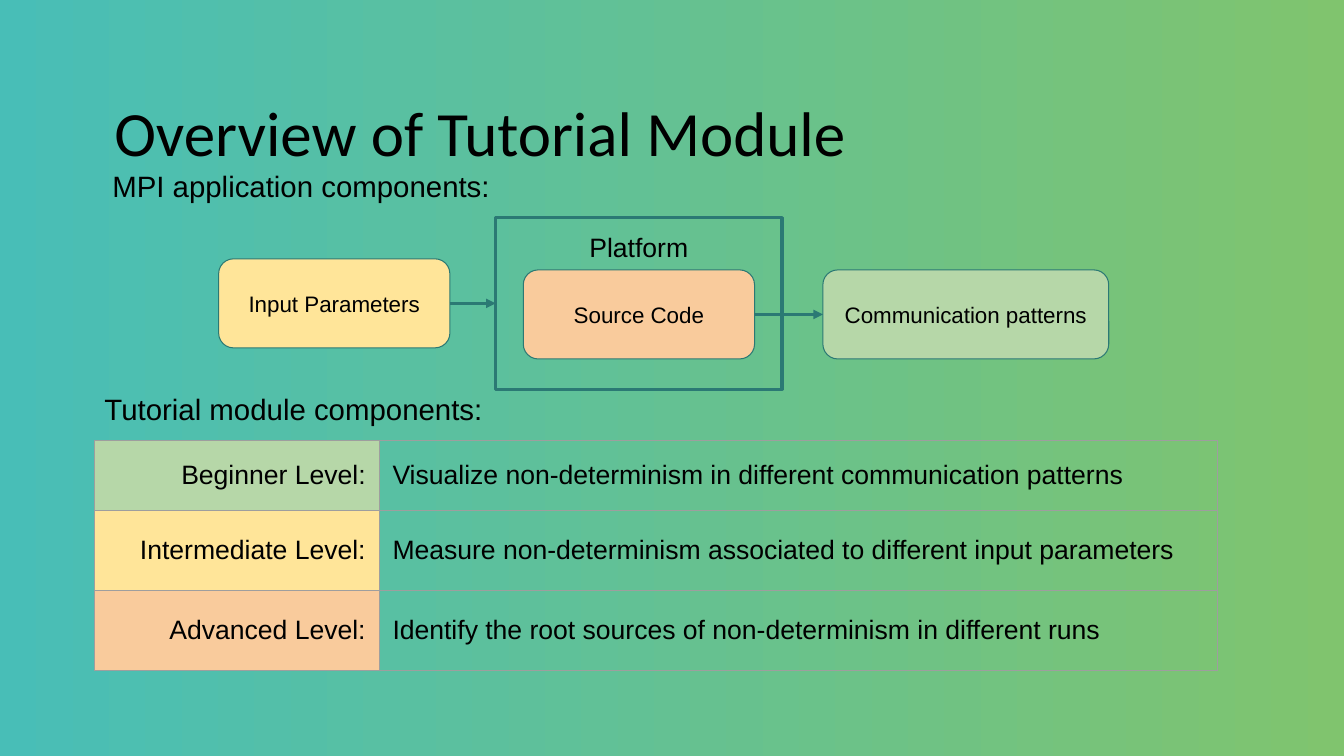
from pptx import Presentation
from pptx.dml.color import RGBColor
from pptx.enum.shapes import MSO_CONNECTOR, MSO_SHAPE
from pptx.enum.text import MSO_ANCHOR, MSO_AUTO_SIZE, PP_ALIGN
from pptx.oxml.ns import qn
from pptx.util import Pt
from lxml.etree import SubElement

BLACK = RGBColor(0x00, 0x00, 0x00)
TEAL = RGBColor(0x2B, 0x79, 0x74)
AQUA = RGBColor(0x48, 0xBE, 0xB7)
LEAF = RGBColor(0x80, 0xC4, 0x6E)
GREEN = RGBColor(0xB6, 0xD7, 0xA8)
YELLOW = RGBColor(0xFF, 0xE5, 0x99)
ORANGE = RGBColor(0xF9, 0xCB, 0x9C)
GRAY = RGBColor(0x9E, 0x9E, 0x9E)

LEVELS = [
    ("Beginner Level:", GREEN,
     "Visualize non-determinism in different communication patterns"),
    ("Intermediate Level:", YELLOW,
     "Measure non-determinism associated to different input parameters"),
    ("Advanced Level:", ORANGE,
     "Identify the root sources of non-determinism in different runs"),
]


class Page:
    """Holds the style and the current slide."""
    font = "Arial"
    pad = 9.6

    def __init__(self, deck):
        self.slide = deck.slides.add_slide(deck.slide_layouts[5])
        self.shapes = self.slide.shapes

    def back(self, *tones):
        fill = self.slide.background.fill
        fill.gradient()
        fill.gradient_angle = 0
        for stop, tone in zip(fill.gradient_stops, tones):
            stop.color.rgb = tone

    def inset(self, item, side, edge):
        item.margin_left = item.margin_right = Pt(side)
        item.margin_top = item.margin_bottom = Pt(edge)

    def words(self, frame, text, size, align=PP_ALIGN.LEFT, font=None):
        para = frame.paragraphs[0]
        para.alignment = align
        run = para.add_run()
        run.text = text
        run.font.name = font or self.font
        run.font.size = Pt(size)
        run.font.color.rgb = BLACK

    def title(self, text, *area):
        shape = self.shapes.title
        shape.left, shape.top, shape.width, shape.height = map(Pt, area)
        frame = shape.text_frame
        frame.auto_size = MSO_AUTO_SIZE.NONE
        frame.vertical_anchor = MSO_ANCHOR.MIDDLE
        self.inset(frame, self.pad, self.pad / 2)
        self.words(frame, text, 45, font="Calibri")

    def label(self, text, *area):
        frame = self.shapes.add_textbox(*map(Pt, area)).text_frame
        frame.word_wrap = True
        frame.auto_size = MSO_AUTO_SIZE.SHAPE_TO_FIT_TEXT
        self.inset(frame, self.pad, self.pad)
        self.words(frame, text, 21)

    def box(self, text, area, tone=None):
        kind = MSO_SHAPE.ROUNDED_RECTANGLE if tone else MSO_SHAPE.RECTANGLE
        shape = self.shapes.add_shape(kind, *map(Pt, area))
        shape.shadow.inherit = False
        shape.line.color.rgb = TEAL
        frame = shape.text_frame
        frame.word_wrap = True
        self.inset(frame, self.pad, self.pad)
        if tone:
            shape.fill.solid()
            shape.fill.fore_color.rgb = tone
            shape.line.width = Pt(0.75)
            frame.vertical_anchor = MSO_ANCHOR.MIDDLE
        else:
            shape.fill.background()
            shape.line.width = Pt(2.25)
            frame.vertical_anchor = MSO_ANCHOR.TOP
        self.words(frame, text, 16 if tone else 19, PP_ALIGN.CENTER)
        return shape

    def arrow(self, start, end, kind=MSO_CONNECTOR.STRAIGHT):
        link = self.shapes.add_connector(kind, 0, 0, 0, 0)
        link.begin_connect(start, 3)
        link.end_connect(end, 1)
        link.line.color.rgb = TEAL
        link.line.width = Pt(2.25)
        props = link._element.spPr
        SubElement(props.find(qn("a:ln")), qn("a:tailEnd"), type="triangle")
        SubElement(props, qn("a:effectLst"))

    def edge(self, cell):
        props = cell._tc.get_or_add_tcPr()
        for spot, side in enumerate("LRTB"):
            line = SubElement(props, qn(f"a:ln{side}"), w=str(Pt(0.75)))
            fill = SubElement(line, qn("a:solidFill"))
            SubElement(fill, qn("a:srgbClr"), val=str(GRAY))
            props.insert(spot, line)

    def cell(self, cell, text, align, tone=None):
        if tone:
            cell.fill.solid()
            cell.fill.fore_color.rgb = tone
        else:
            cell.fill.background()
        cell.vertical_anchor = MSO_ANCHOR.MIDDLE
        self.inset(cell, self.pad, self.pad)
        self.words(cell.text_frame, text, 19, align)
        self.edge(cell)

    def table(self, rows, left, top, wide, high):
        grid = self.shapes.add_table(len(rows), len(wide), Pt(left), Pt(top),
                                     Pt(sum(wide)), Pt(sum(high))).table
        grid.first_row = grid.horz_banding = False
        for col, width in zip(grid.columns, wide):
            col.width = Pt(width)
        for row, height, (name, tone, goal) in zip(grid.rows, high, rows):
            row.height = Pt(height)
            self.cell(row.cells[0], name, PP_ALIGN.RIGHT, tone)
            self.cell(row.cells[1], goal, PP_ALIGN.LEFT)


def main():
    deck = Presentation()
    deck.slide_width, deck.slide_height = Pt(960), Pt(540)
    page = Page(deck)
    page.back(AQUA, LEAF)
    page.title("Overview of Tutorial Module", 72, 41, 1136, 105)

    # Levels of the tutorial
    page.table(LEVELS, 67.6, 314.6, (203.2, 598.5), (50.2, 57, 57))
    page.label("MPI application components:", 70.6, 110.2, 807, 44.6)
    page.label("Tutorial module components:", 65, 270, 807, 44.6)

    # Flow from input to patterns
    plat = page.box("Platform", (354, 155.4, 204.6, 122.6))
    comm = page.box("Communication patterns", (587.8, 192.8, 204.2, 63.6), GREEN)
    code = page.box("Source Code", (373.8, 192.8, 165.2, 63.6), ORANGE)
    data = page.box("Input Parameters", (156.2, 184.9, 165.2, 63.6), YELLOW)
    page.arrow(code, comm, MSO_CONNECTOR.ELBOW)
    page.arrow(data, plat)

    deck.save("out.pptx")


if __name__ == "__main__":
    main()
